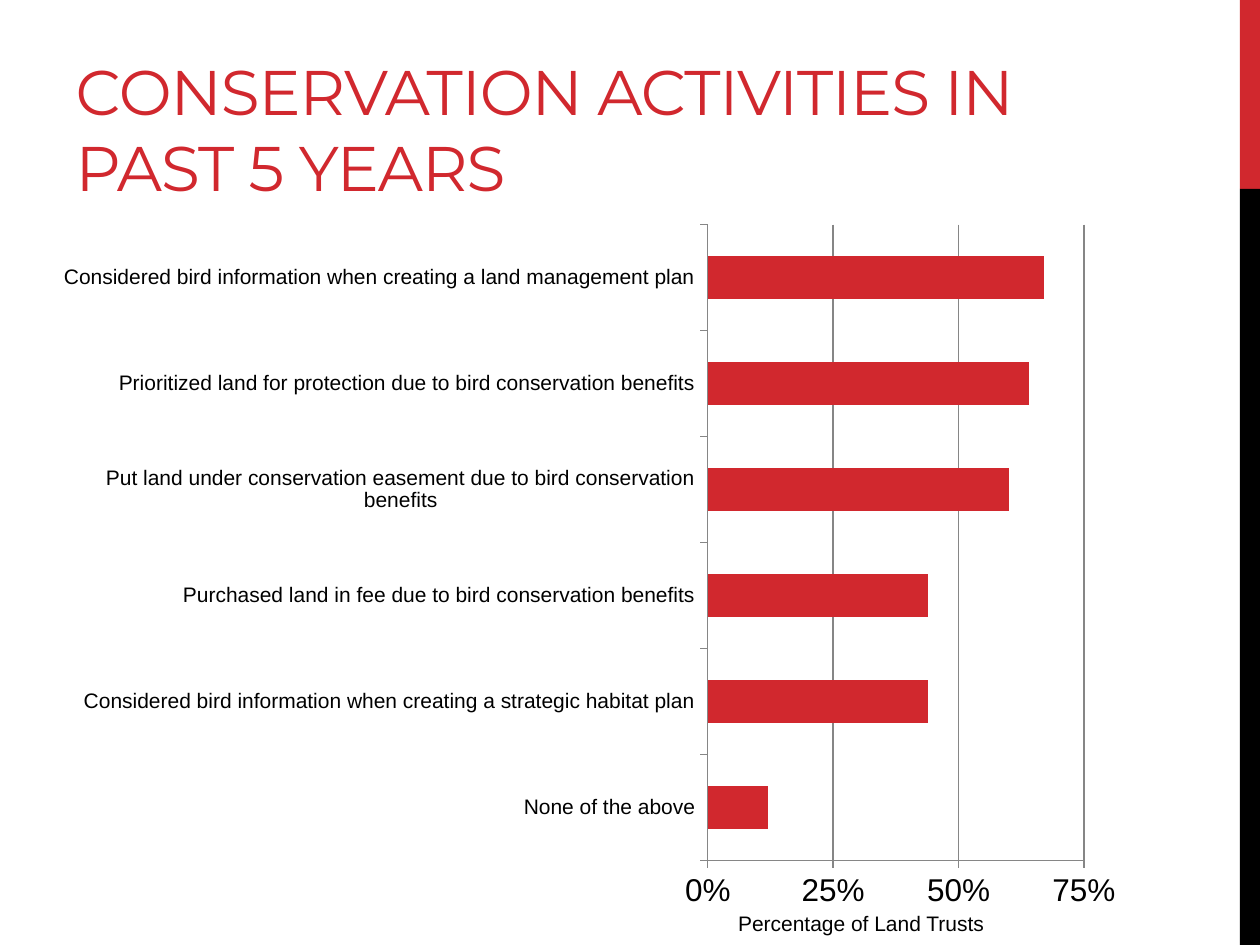
from lxml import etree
from pptx import Presentation
from pptx.chart.data import CategoryChartData
from pptx.dml.color import RGBColor
from pptx.enum.chart import XL_CHART_TYPE, XL_TICK_MARK
from pptx.enum.shapes import MSO_SHAPE
from pptx.enum.text import MSO_ANCHOR, MSO_AUTO_SIZE, PP_ALIGN
from pptx.oxml import parse_xml
from pptx.oxml.ns import nsdecls, qn
from pptx.util import Inches, Pt

RED = RGBColor(0xD1, 0x28, 0x2E)
BLACK = RGBColor(0, 0, 0)
GRAY = RGBColor(0x86, 0x86, 0x86)
OUTSIDE = XL_TICK_MARK.OUTSIDE

# Content, bottom bar first
TITLE = "CONSERVATION ACTIVITIES IN PAST 5 YEARS"
AXIS_LABEL = "Percentage of Land Trusts"
ACTIVITIES = [
    ("None of the above", 0.12),
    ("Considered bird information when creating a strategic habitat plan", 0.44),
    ("Purchased land in fee due to bird conservation benefits", 0.44),
    ("Put land under conservation easement due to bird conservation benefits", 0.6),
    ("Prioritized land for protection due to bird conservation benefits", 0.64),
    ("Considered bird information when creating a land management plan", 0.67),
]
WIDTH, HEIGHT = Inches(10), Inches(7.5)
BAND_W = Inches(0.16)
BANDS = [(0, 0.2, RED), (0.2, 0.8, BLACK)]  # top and height as shares of the slide
PLOT = {"x": 0.6, "y": 0.02, "w": 0.35, "h": 0.89}  # shares of the chart

prs = Presentation()
prs.slide_width, prs.slide_height = WIDTH, HEIGHT
s = prs.slides.add_slide(prs.slide_layouts[5])

# Side band
for top, share, color in BANDS:
    sp = s.shapes.add_shape(MSO_SHAPE.RECTANGLE, WIDTH - BAND_W, int(top * HEIGHT),
                            BAND_W, int(share * HEIGHT))
    sp.shadow.inherit = False
    sp.fill.solid()
    sp.fill.fore_color.rgb = color
    sp.line.fill.background()

# Title
title = s.shapes.title
title.left, title.top = Inches(0.5), Inches(0.17)
title.width, title.height = Inches(7.82), Inches(1.5)
tf = title.text_frame
tf.text = TITLE
tf.word_wrap = True
tf.auto_size = MSO_AUTO_SIZE.NONE
tf.vertical_anchor = MSO_ANCHOR.BOTTOM
p = tf.paragraphs[0]
p.alignment = PP_ALIGN.LEFT
p.font.size, p.font.name = Pt(36), "Montserrat"
p.font.color.rgb = RED
p.runs[0].font._element.set("spc", "-60")

# Bar chart
data = CategoryChartData(number_format="0%")
data.categories = [name for name, _ in ACTIVITIES]
data.add_series("Series 1", [value for _, value in ACTIVITIES])
chart = s.shapes.add_chart(XL_CHART_TYPE.BAR_CLUSTERED, Inches(0.5), Inches(1.67),
                           Inches(8.53), Inches(5.67), data).chart
chart.has_legend = False
chart.has_title = False
chart.font.size, chart.font.name = Pt(18), "Arial"
chart.font.color.rgb = BLACK
plot = chart.plots[0]
plot.gap_width = 150
plot.vary_by_categories = False
bars = plot.series[0].format.fill
bars.solid()
bars.fore_color.rgb = RED

# Axes
cat_axis, val_axis = chart.category_axis, chart.value_axis
cat_axis.tick_labels.font.size = Pt(12)
val_axis.minimum_scale, val_axis.maximum_scale = 0, 0.75
val_axis.major_unit = 0.25
val_axis.has_major_gridlines = True
val_axis.tick_labels.number_format = "0%"
val_axis.tick_labels.number_format_is_linked = False
for axis in (cat_axis, val_axis):
    axis.major_tick_mark = OUTSIDE
    axis.format.line.color.rgb = GRAY
val_axis.major_gridlines.format.line.color.rgb = GRAY

# Fixed inner plot area
plot_area = chart._chartSpace.chart.plotArea
for old in plot_area.findall(qn("c:layout")):
    plot_area.remove(old)
layout = parse_xml(f"<c:layout {nsdecls('c')}><c:manualLayout/></c:layout>")
settings = [("layoutTarget", "inner"), ("xMode", "edge"), ("yMode", "edge"), *PLOT.items()]
for tag, value in settings:
    etree.SubElement(layout[0], qn(f"c:{tag}")).set("val", str(value))
plot_area.insert(0, layout)

# Axis label
tf = s.shapes.add_textbox(Inches(4.76), Inches(7.18), Inches(4.15), Inches(0.32)).text_frame
tf.word_wrap = True
tf.text = AXIS_LABEL
p = tf.paragraphs[0]
p.alignment = PP_ALIGN.CENTER
p.font.size, p.font.name = Pt(12), "Arial"
p.font.color.rgb = BLACK

prs.save("out.pptx")
